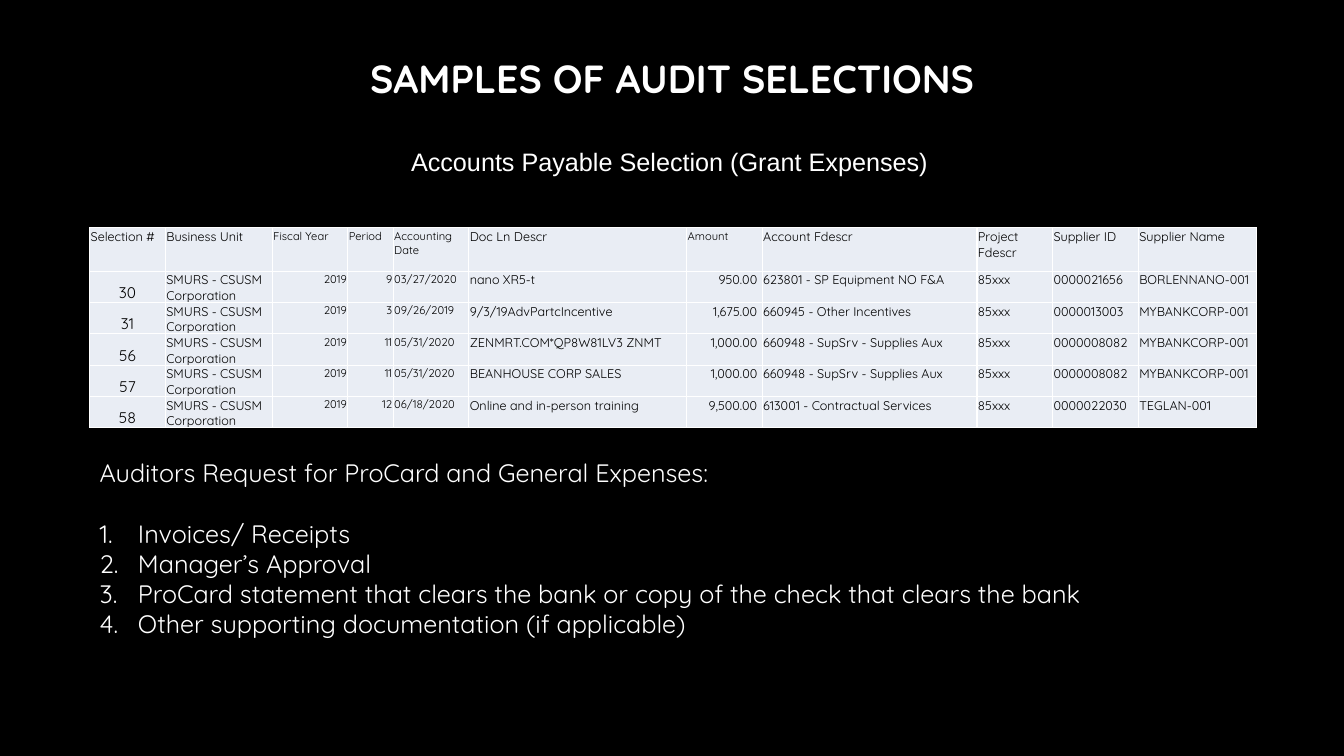
from lxml import etree
from pptx import Presentation
from pptx.dml.color import RGBColor
from pptx.enum.text import MSO_ANCHOR, PP_ALIGN
from pptx.oxml.ns import qn
from pptx.util import Inches, Pt

LEFT, CENTER, RIGHT = PP_ALIGN.LEFT, PP_ALIGN.CENTER, PP_ALIGN.RIGHT
TOP, MIDDLE, BOTTOM = MSO_ANCHOR.TOP, MSO_ANCHOR.MIDDLE, MSO_ANCHOR.BOTTOM
BLACK, WHITE, CELL_FILL = "000000", "FFFFFF", "E9EDF4"

# Content
TITLE = "SAMPLES OF AUDIT SELECTIONS"
SUBTITLE = "Accounts Payable Selection (Grant Expenses)"
REQUEST = "Auditors Request for ProCard and General Expenses:"
DOCUMENTS = [
    "Invoices/ Receipts",
    "Manager’s Approval",
    "ProCard statement that clears the bank or copy of the check that clears the bank",
    "Other supporting documentation (if applicable)",
]
UNIT, YEAR, PROJECT = "SMURS - CSUSM Corporation", "2019", "85xxx"
# Heading, width, heading size, body size, body alignment
COLUMNS = [
    ("Selection #", 0.75, 9, 11, CENTER),
    ("Business Unit", 1.06, 9, 9, LEFT),
    ("Fiscal Year", 0.75, 8, 8, RIGHT),
    ("Period", 0.45, 8, 8, RIGHT),
    ("Accounting Date", 0.75, 8, 8, LEFT),
    ("Doc Ln Descr", 2.16, 9, 9, LEFT),
    ("Amount", 0.75, 8, 9, RIGHT),
    ("Account Fdescr", 2.13, 9, 9, LEFT),
    ("Project Fdescr", 0.75, 9, 9, LEFT),
    ("Supplier ID", 0.85, 9, 9, LEFT),
    ("Supplier Name", 1.17, 9, 9, LEFT),
]
SELECTIONS = [
    ("30", UNIT, YEAR, "9", "03/27/2020", "nano XR5-t", "950.00",
     "623801 - SP Equipment NO F&A", PROJECT, "0000021656", "BORLENNANO-001"),
    ("31", UNIT, YEAR, "3", "09/26/2019", "9/3/19AdvPartcIncentive", "1,675.00",
     "660945 - Other Incentives", PROJECT, "0000013003", "MYBANKCORP-001"),
    ("56", UNIT, YEAR, "11", "05/31/2020", "ZENMRT.COM*QP8W81LV3 ZNMT", "1,000.00",
     "660948 - SupSrv - Supplies Aux", PROJECT, "0000008082", "MYBANKCORP-001"),
    ("57", UNIT, YEAR, "11", "05/31/2020", "BEANHOUSE CORP SALES", "1,000.00",
     "660948 - SupSrv - Supplies Aux", PROJECT, "0000008082", "MYBANKCORP-001"),
    ("58", UNIT, YEAR, "12", "06/18/2020", "Online and in-person training", "9,500.00",
     "613001 - Contractual Services", PROJECT, "0000022030", "TEGLAN-001"),
]
HEADER_HEIGHT, ROW_HEIGHT = 0.43, 0.29


def color(value):
    return RGBColor.from_string(value)


def write(paragraph, text, size=18, font="Quicksand", fill=WHITE, bold=False,
          align=LEFT, before=0):
    paragraph.alignment = align
    if before:
        paragraph.space_before = Pt(before)
    run = paragraph.add_run()
    run.text = text
    run.font.size, run.font.name, run.font.bold = Pt(size), font, bold
    run.font.color.rgb = color(fill)
    return run


def add_text_frame(left, top, width, height):
    shape = slide.shapes.add_textbox(Inches(left), Inches(top), Inches(width), Inches(height))
    shape.text_frame.word_wrap = True
    return shape.text_frame


def number(paragraph):
    properties = paragraph._p.get_or_add_pPr()
    properties.set("marL", str(Inches(0.38)))
    properties.set("indent", str(-Inches(0.38)))
    etree.SubElement(properties, qn("a:buFont"), typeface="+mj-lt")
    etree.SubElement(properties, qn("a:buAutoNum"), type="arabicPeriod")


def add_text_shadow(run):
    effects = etree.Element(qn("a:effectLst"))
    shadow = etree.SubElement(effects, qn("a:outerShdw"), blurRad="38100", dist="38100",
                              dir="2700000", algn="tl")
    tone = etree.SubElement(shadow, qn("a:srgbClr"), val=BLACK)
    etree.SubElement(tone, qn("a:alpha"), val="43000")
    run._r.rPr.find(qn("a:solidFill")).addnext(effects)


def format_cell(cell, right_margin):
    cell.margin_left = cell.margin_top = Inches(0.01)
    cell.margin_right, cell.margin_bottom = Inches(right_margin), 0
    properties = cell._tc.get_or_add_tcPr()
    for side in ("lnL", "lnR", "lnT", "lnB"):
        line = etree.SubElement(properties, qn(f"a:{side}"), w=str(Pt(1)))
        fill = etree.SubElement(line, qn("a:solidFill"))
        etree.SubElement(fill, qn("a:srgbClr"), val=WHITE)
    cell.fill.solid()
    cell.fill.fore_color.rgb = color(CELL_FILL)


presentation = Presentation()
presentation.slide_width, presentation.slide_height = Inches(13.33), Inches(7.5)
slide = presentation.slides.add_slide(presentation.slide_layouts[5])
slide.background.fill.solid()
slide.background.fill.fore_color.rgb = color(BLACK)

# Title and subtitle
title = slide.shapes.title
title.left, title.top, title.width, title.height = map(Inches, (0.89, 0.49, 11.55, 0.57))
title.text_frame.vertical_anchor = MIDDLE
heading = write(title.text_frame.paragraphs[0], TITLE, size=28, bold=True, align=CENTER)
add_text_shadow(heading)
subtitle = add_text_frame(0, 1.4, 13.28, 0.4)
write(subtitle.paragraphs[0], SUBTITLE, font="Arial", align=CENTER)

# Selections table
row_count = len(SELECTIONS) + 1
table = slide.shapes.add_table(
    row_count, len(COLUMNS), Inches(0.89), Inches(2.26),
    Inches(sum(column[1] for column in COLUMNS)),
    Inches(HEADER_HEIGHT + ROW_HEIGHT * len(SELECTIONS))).table
table.first_row = table.horz_banding = False
for row in range(row_count):
    table.rows[row].height = Inches(ROW_HEIGHT if row else HEADER_HEIGHT)
for index, (name, width, heading_size, body_size, body_align) in enumerate(COLUMNS):
    table.columns[index].width = Inches(width)
    for row in range(row_count):
        cell = table.cell(row, index)
        is_body = row > 0
        format_cell(cell, 0.05 if is_body and name == "Amount" else 0.01)
        cell.vertical_anchor = BOTTOM if is_body and name == "Selection #" else TOP
        write(cell.text_frame.paragraphs[0],
              SELECTIONS[row - 1][index] if is_body else name,
              size=body_size if is_body else heading_size,
              align=body_align if is_body else LEFT, fill=BLACK)

# Requested documents
request = add_text_frame(0.89, 4.49, 10.32, 2.22)
write(request.paragraphs[0], REQUEST)
for index, document in enumerate(DOCUMENTS):
    paragraph = request.add_paragraph()
    # Spacing goes in first so that the numbering follows it
    paragraph.space_before = Pt(0 if index else 21.6)
    number(paragraph)
    write(paragraph, document)

presentation.save("out.pptx")
